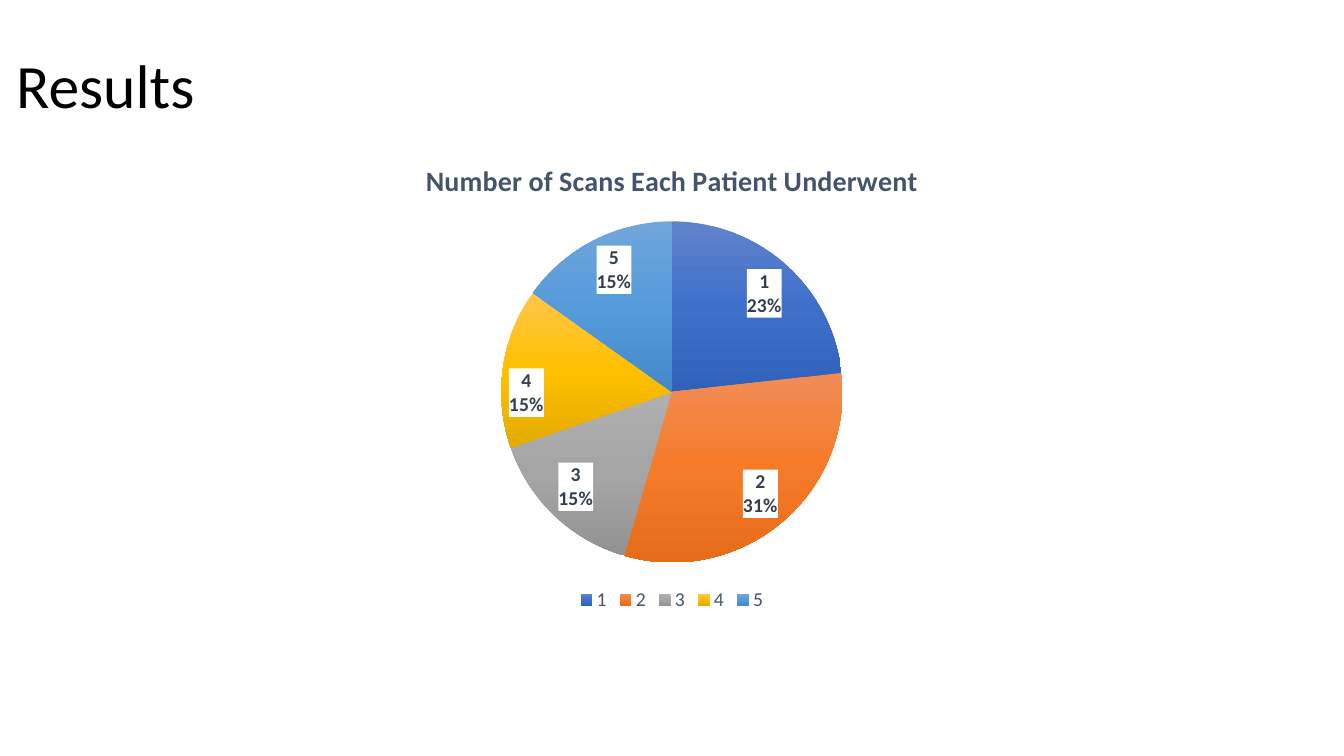
from copy import deepcopy

from lxml import etree
from pptx import Presentation
from pptx.chart.data import CategoryChartData
from pptx.dml.color import RGBColor
from pptx.enum import chart as ch, text
from pptx.oxml import parse_xml
from pptx.oxml.ns import nsdecls, qn
from pptx.util import Inches, Pt

FONT = "Calibri"
BLACK = RGBColor(0x00, 0x00, 0x00)
SLATE = RGBColor(0x44, 0x54, 0x6A)
DARK_SLATE = RGBColor(0x33, 0x3F, 0x50)

HEADING = "Results"
CHART_TITLE = "Number of Scans Each Patient Underwent"
# scans, share of patients in percent, gradient from top to bottom
SLICES = [
    ("1", 23, ("6183CB", "3E70CA", "3062BB")),
    ("2", 31, ("F18C57", "F67B28", "E56C19")),
    ("3", 15, ("AFAFAF", "A5A5A5", "939393")),
    ("4", 15, ("FFC64B", "FFC000", "E3AB00")),
    ("5", 15, ("71A6DB", "559BDB", "448ACA")),
]


def style(font, size, color, bold=False):
    font.name, font.size, font.bold = FONT, Pt(size), bold
    font.color.rgb = color


def write(frame, words, size, color, bold=False):
    frame.text = words
    style(frame.paragraphs[0].runs[0].font, size, color, bold)


def fill_slices(series):
    """Give each slice its three-stop vertical gradient."""
    fills = [series.points[i].format.fill for i in range(len(SLICES))]
    for fill in fills:
        fill.gradient()
        fill.gradient_angle = 270
    for stops in series._element.iter(qn("a:gsLst")):
        stops.append(deepcopy(stops[-1]))
    for fill, (_, _, colors) in zip(fills, SLICES):
        for stop, position, color in zip(fill.gradient_stops, (0, 0.5, 1), colors):
            stop.position = position
            stop.color.rgb = RGBColor.from_string(color)


def label_slices(series):
    """Show category over percentage in a white box."""
    labels = series.data_labels
    labels.show_value = False
    labels.show_category_name = labels.show_percentage = True
    labels.position = ch.XL_LABEL_POSITION.INSIDE_END
    style(labels.font, 14, DARK_SLATE, bold=True)
    xml = series._element.find(qn("c:dLbls"))
    xml.find(qn("c:txPr")).addprevious(parse_xml(
        f'<c:spPr {nsdecls("c", "a")}><a:solidFill><a:srgbClr val="FFFFFF"/>'
        "</a:solidFill></c:spPr>"))
    separator = etree.Element(qn("c:separator"))
    separator.text = "\n"
    xml.find(qn("c:showBubbleSize")).addnext(separator)


def add_scans_pie(slide):
    data = CategoryChartData()
    data.categories = [scans for scans, _, _ in SLICES]
    data.add_series("Series 1", [share for _, share, _ in SLICES])
    pie = slide.shapes.add_chart(
        ch.XL_CHART_TYPE.PIE, Inches(2.83), Inches(1.4),
        Inches(7.67), Inches(4.71), data).chart
    style(pie.font, 10, BLACK)
    pie.has_title = True
    write(pie.chart_title.text_frame, CHART_TITLE, 20, SLATE, bold=True)
    pie.chart_title.include_in_layout = False
    pie.has_legend = True
    pie.legend.position = ch.XL_LEGEND_POSITION.BOTTOM
    pie.legend.include_in_layout = False
    style(pie.legend.font, 14, SLATE)
    pie.plots[0].vary_by_categories = True
    series = pie.plots[0].series[0]
    fill_slices(series)
    label_slices(series)


def main():
    deck = Presentation()
    deck.slide_width, deck.slide_height = Inches(13.33), Inches(7.5)
    slide = deck.slides.add_slide(deck.slide_layouts[5])
    heading = slide.shapes.title
    heading.left, heading.top = Inches(0.06), Inches(0.15)
    heading.width, heading.height = Inches(11.5), Inches(1.45)
    frame = heading.text_frame
    write(frame, HEADING, 44, BLACK)
    frame.vertical_anchor = text.MSO_ANCHOR.MIDDLE
    frame.paragraphs[0].alignment = text.PP_ALIGN.LEFT
    frame.paragraphs[0].line_spacing = 0.9
    add_scans_pie(slide)
    deck.save("out.pptx")


if __name__ == "__main__":
    main()
